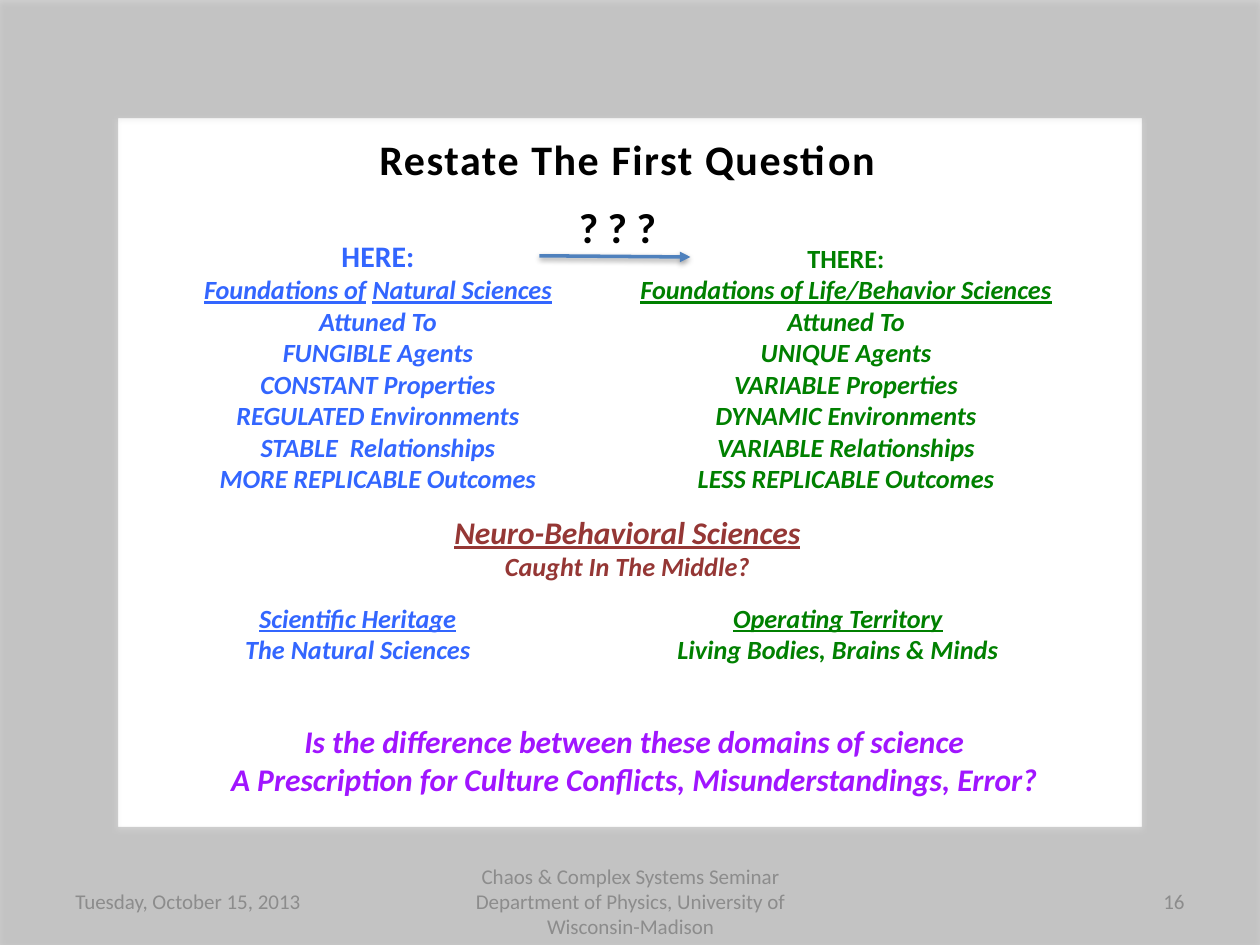
"""Build the slide that contrasts natural sciences with life and behavior sciences."""
import dataclasses

import lxml.etree
import pptx
import pptx.dml.color
import pptx.enum.shapes
import pptx.enum.text
import pptx.oxml
import pptx.oxml.ns
import pptx.util

ALIGN = pptx.enum.text.PP_ALIGN
ANCHOR = pptx.enum.text.MSO_ANCHOR


@dataclasses.dataclass(frozen=True)
class Theme:
    """Colours, type sizes and font of the slide."""
    font: str = "Calibri"
    ink: str = "000000"
    muted: str = "8C8C8C"
    here: str = "3366FF"
    there: str = "008000"
    middle: str = "953735"
    closing: str = "A015FF"
    arrow: str = "4F81BD"
    title: float = 24
    lead: float = 18
    label: float = 17
    body: float = 15
    footer: float = 12


def rgb(value):
    """Turn a hex string into a colour."""
    return pptx.dml.color.RGBColor.from_string(value)


def write(para, text, font, size, color, bold=True, italic=False, underline=False, spacing=0):
    """Add one formatted span to a paragraph."""
    span = para.add_run()
    span.text = text
    span.font.name, span.font.size = font, pptx.util.Pt(size)
    span.font.bold, span.font.italic, span.font.underline = bold, italic, underline
    span.font.color.rgb = rgb(color)
    if spacing:
        span.font._element.set("spc", str(round(spacing * 100)))


def add_shadow(shape, opacity, distance):
    """Give a shape a soft shadow that falls straight down."""
    namespace = pptx.oxml.ns.nsdecls("a")
    shape.element.spPr.append(pptx.oxml.parse_xml(
        f'<a:effectLst {namespace}><a:outerShdw blurRad="40000" dist="{pptx.util.Pt(distance)}" '
        f'dir="5400000" rotWithShape="0"><a:srgbClr val="000000">'
        f'<a:alpha val="{opacity * 1000}"/></a:srgbClr></a:outerShdw></a:effectLst>'))


class Page:
    """Holds the theme and slide, measured on a grid of 100 columns by 75 rows."""

    def __init__(self, deck, theme):
        """Add a blank slide to the deck."""
        self.theme = theme
        self.slide = deck.slides.add_slide(deck.slide_layouts[6])
        self.column, self.row = deck.slide_width / 100, deck.slide_height / 75

    def place(self, left, top, width, height):
        """Convert grid columns and rows to lengths."""
        return [round(value * unit) for value, unit in
                zip((left, top, width, height), (self.column, self.row) * 2)]

    def frame(self, *area, opacity):
        """Draw a translucent frame."""
        shape = self.slide.shapes.add_shape(
            pptx.enum.shapes.MSO_SHAPE.FRAME, *self.place(*area))
        shape.line.fill.background()
        shape.fill.solid()
        shape.fill.fore_color.rgb = rgb(self.theme.ink)
        color = shape.element.spPr.find(".//" + pptx.oxml.ns.qn("a:srgbClr"))
        lxml.etree.SubElement(color, pptx.oxml.ns.qn("a:alpha"), val=str(opacity * 1000))
        add_shadow(shape, 35, 1.8)

    def text(self, *area, lines, align=ALIGN.CENTER, anchor=ANCHOR.TOP, wrap=True, **style):
        """Write lines, each a list of (text, format changes) spans."""
        box = self.slide.shapes.add_textbox(*self.place(*area)).text_frame
        box.word_wrap, box.vertical_anchor = wrap, anchor
        for index, spans in enumerate(lines):
            para = box.add_paragraph() if index else box.paragraphs[0]
            para.alignment = align
            for text, changes in spans:
                write(para, text, **{"font": self.theme.font, **style, **changes})

    def footer(self, left, width, text, align):
        """Write one part of the footer."""
        self.text(left, 69.5, width, 4, lines=[[(text, {})]], align=align, anchor=ANCHOR.MIDDLE,
                  size=self.theme.footer, color=self.theme.muted, bold=False)

    def arrow(self, left, top, right, bottom):
        """Draw a line with an arrowhead at its end."""
        line = self.slide.shapes.add_connector(
            pptx.enum.shapes.MSO_CONNECTOR.STRAIGHT, *self.place(left, top, right, bottom))
        line.line.width = pptx.util.Pt(2)
        line.line.color.rgb = rgb(self.theme.arrow)
        lxml.etree.SubElement(line.line._get_or_add_ln(), pptx.oxml.ns.qn("a:tailEnd"),
                              type="triangle")
        add_shadow(line, 38, 1.6)


def main():
    """Build and save the deck."""
    deck = pptx.Presentation()
    deck.slide_width, deck.slide_height = pptx.util.Inches(10), pptx.util.Inches(7.5)
    theme = Theme()
    page = Page(deck, theme)
    under = {"underline": True}

    page.frame(0, 0, 100, 75, opacity=18)
    page.footer(5, 23.3, "Tuesday, October 15, 2013", ALIGN.LEFT)
    page.footer(71.7, 23.3, "16", ALIGN.RIGHT)
    page.footer(34.2, 31.7, "Chaos & Complex Systems Seminar Department of Physics, "
                "University of Wisconsin-Madison", ALIGN.CENTER)
    page.text(10.4, 10.1, 78.8, 5, lines=[[("Restate The First Question", {})]],
              size=theme.title, color=theme.ink, spacing=0.9)

    columns = [
        ((11.2, 18.4, 37.6, 24.3), theme.here, ("HERE:", theme.label),
         [("Foundations of", under), (" ", {}), ("Natural Sciences", under)],
         ("FUNGIBLE", "CONSTANT", "REGULATED", "STABLE ", "MORE REPLICABLE")),
        ((48.8, 18.7, 36.7, 21.2), theme.there, ("THERE:", theme.body),
         [("Foundations of Life/Behavior Sciences", under)],
         ("UNIQUE", "VARIABLE", "DYNAMIC", "VARIABLE", "LESS REPLICABLE")),
    ]
    nouns = ("Agents", "Properties", "Environments", "Relationships", "Outcomes")
    for area, color, (label, size), heading, traits in columns:
        traits = [[(f"{trait} {noun}", {})] for trait, noun in zip(traits, nouns)]
        lines = [[(label, {"size": size, "italic": False})], heading,
                 [("Attuned To", {})], *traits]
        page.text(*area, lines=lines, size=theme.body, color=color, italic=True)

    page.text(9, 40.2, 81.6, 6.6, size=theme.lead, color=theme.middle, italic=True,
              lines=[[("Neuro-Behavioral Sciences", under)],
                     [("Caught In The Middle?", {"size": theme.body})]])
    pairs = [
        (13.4, theme.here, "Scientific Heritage", "The Natural Sciences"),
        (51.5, theme.there, "Operating Territory", "Living Bodies, Brains & Minds"),
    ]
    for left, color, heading, detail in pairs:
        page.text(left, 47.3, 30, 6.1, lines=[[(heading, under)], [(detail, {})]],
                  size=theme.body, color=color, italic=True)

    page.text(11.2, 56.8, 78.3, 7, size=theme.lead, color=theme.closing, italic=True, lines=[
        [("Is the difference between these domains of science", {})],
        [("A Prescription for Culture Conflicts, Misunderstandings, Error?", {})]])
    page.arrow(42.8, 20.3, 54.8, 20.4)
    page.text(44.9, 15.5, 8.2, 5, lines=[[("? ? ?", {})]], wrap=False,
              size=theme.title, color=theme.ink)
    deck.save("out.pptx")


if __name__ == "__main__":
    main()
